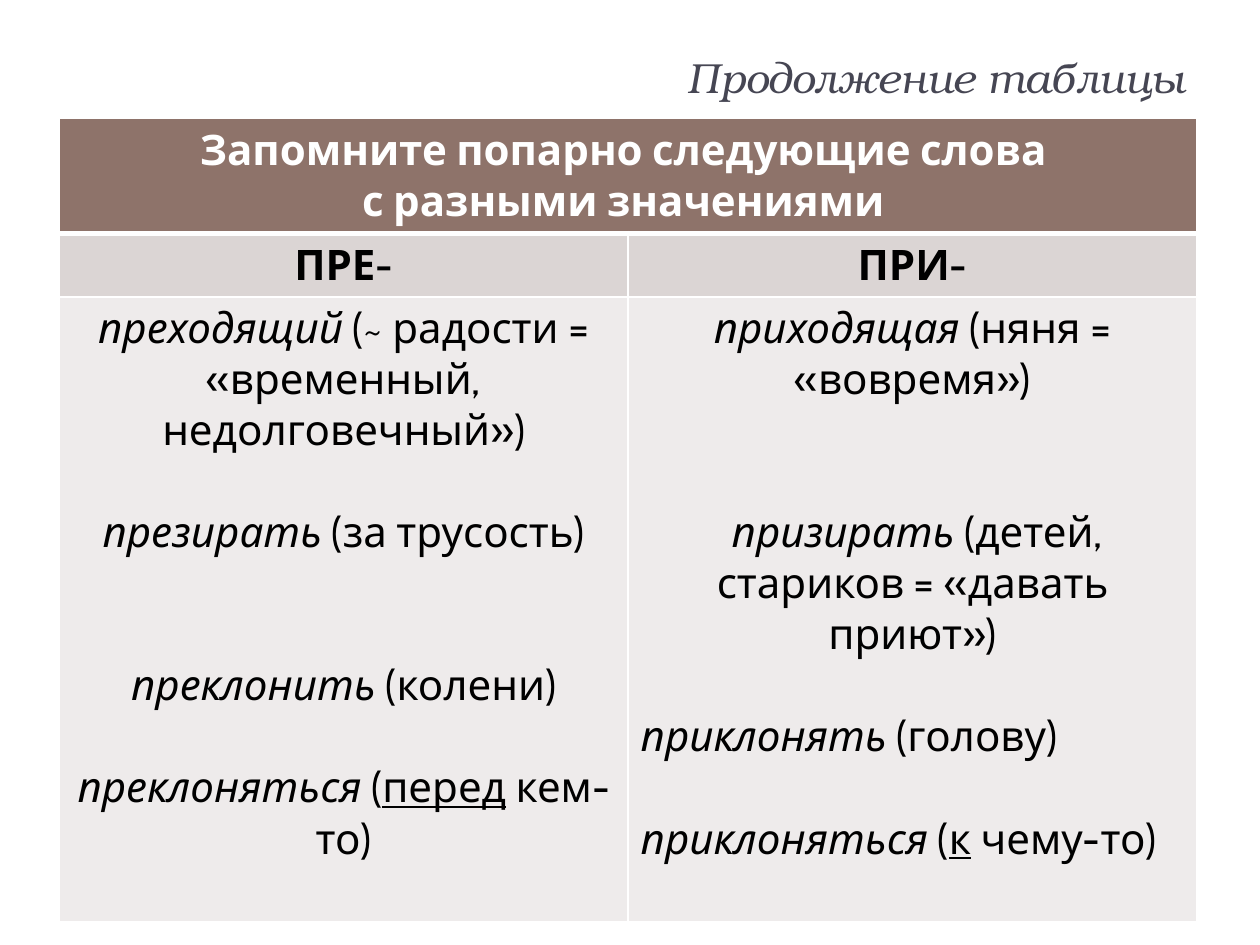
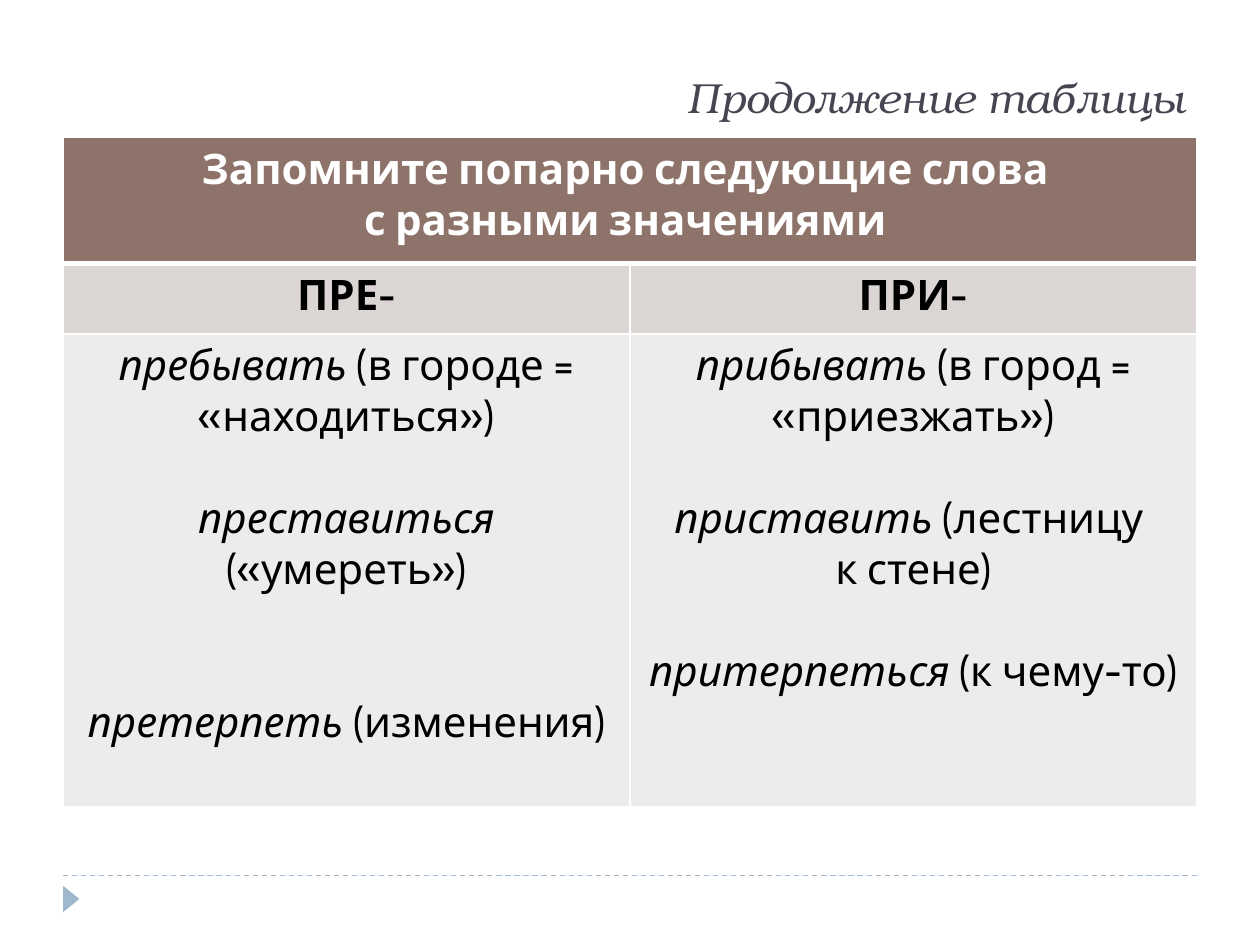
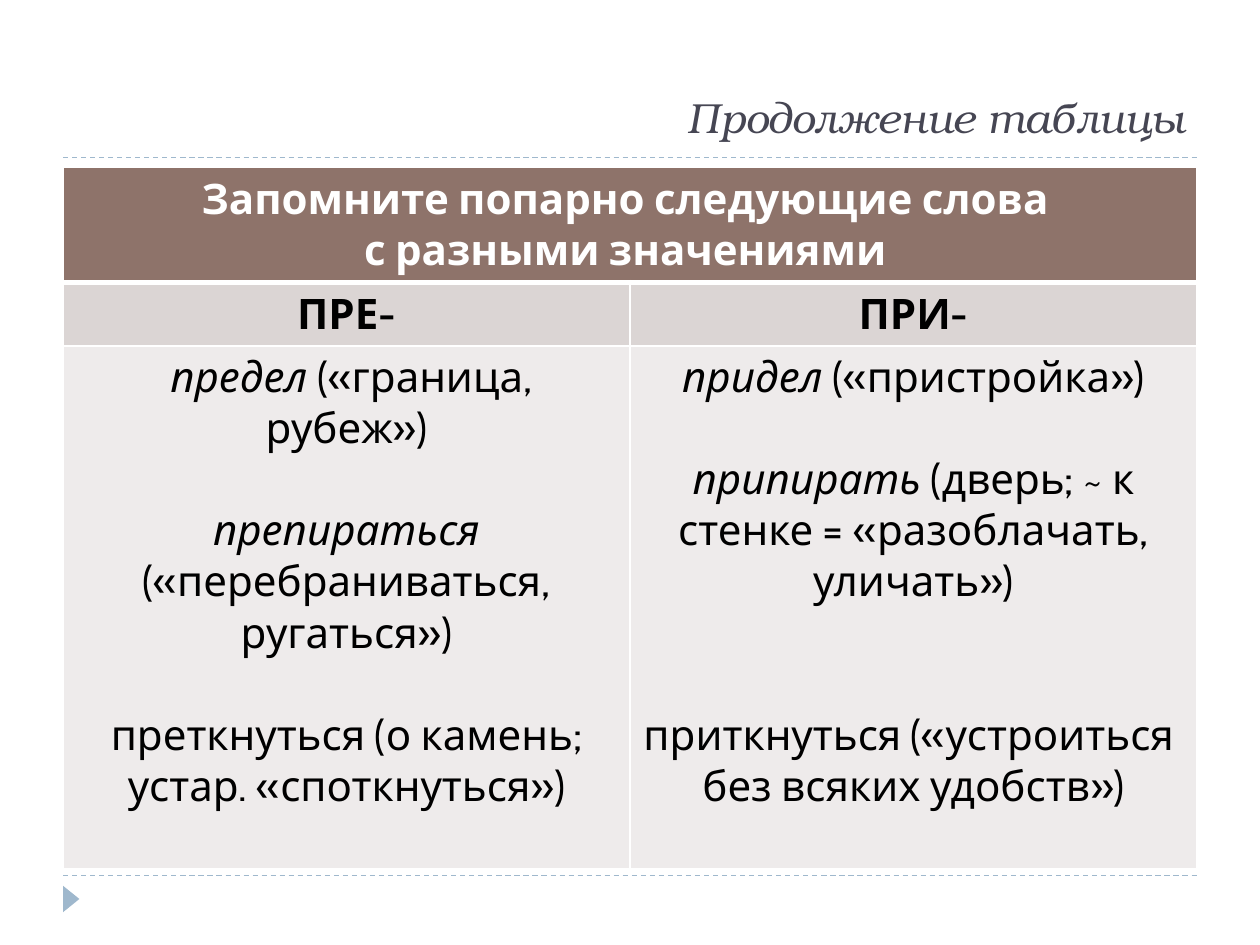
from dataclasses import dataclass

from lxml import etree
from pptx import Presentation
from pptx import util as u
from pptx.dml.color import RGBColor
from pptx.enum import dml, shapes, text
from pptx.oxml.ns import qn

WHITE = RGBColor(0xFF, 0xFF, 0xFF)
BLACK = RGBColor(0x00, 0x00, 0x00)
INK = RGBColor(0x46, 0x46, 0x53)
ACCENT = RGBColor(0x9F, 0xB8, 0xCD)
HEADER_FILL = RGBColor(0x8E, 0x73, 0x6A)
PREFIX_FILL = RGBColor(0xDB, 0xD5, 0xD4)
BODY_FILL = RGBColor(0xEE, 0xEB, 0xEB)

TITLE_FONT = "TeX Gyre Bonum"
BODY_FONT = "Cabin"
TEXT_SIZE = u.Pt(24)
LINE_PITCH = 29.15  # points per line of table text

TITLE = "Продолжение таблицы"
HEADING = ("Запомните попарно следующие слова ", "с разными значениями ")
PREFIXES = ("ПРЕ-", "ПРИ-")
LEFT, CENTER = text.PP_ALIGN.LEFT, text.PP_ALIGN.CENTER


@dataclass(frozen=True)
class Entry:
    """A word in italics and its explanation; gap counts free lines above."""
    word: str
    note: str
    gap: int = 1
    underlined: str = ""
    ending: str = ""
    align: text.PP_ALIGN = CENTER


@dataclass(frozen=True)
class WordTable:
    title_height: float
    left: float
    top: float
    width: float
    row_heights: tuple[float, float, float]
    columns: tuple[list[Entry], list[Entry]]


WORD_TABLES = [
    WordTable(0.69, 0.47, 0.94, 9.03, (0.91, 0.5, 4.96), (
        [
            Entry("преходящий", " (~ радости = «временный, недолговечный»)", 0),
            Entry("презирать", " (за трусость)"),
            Entry("преклонить", " (колени)", 2),
            Entry("преклоняться ", "(", 1, "перед", " кем-то)"),
        ],
        [
            Entry("приходящая ", "(няня = «вовремя»)", 0),
            Entry(" призирать ", "(детей, стариков = «давать приют»)", 2),
            Entry("приклонять", " (голову)", align=LEFT),
            Entry("приклоняться", " (", 1, "к", " чему-то)", LEFT),
        ],
    )),
    WordTable(0.85, 0.5, 1.09, 9, (1, 0.56, 3.75), (
        [
            Entry("пребывать", " (в городе = «находиться»)", 0),
            Entry("преставиться", " («умереть»)"),
            Entry("претерпеть", " (изменения)", 2),
        ],
        [
            Entry("прибывать", " (в город = «приезжать»)", 0),
            Entry("приставить", " (лестницу "),
            Entry("", "к стене)", 0),
            Entry("притерпеться ", "(к чему-то)"),
        ],
    )),
    WordTable(1.01, 0.5, 1.33, 9, (0.91, 0.5, 4.15), (
        [
            Entry(" предел", " («граница, рубеж»)", 0),
            Entry("препираться", " («перебраниваться, ругаться»)"),
            Entry("", "преткнуться (о камень; устар. «споткнуться»)"),
        ],
        [
            Entry("придел ", "(«пристройка»)", 0),
            Entry("припирать", " (дверь; ~ к стенке = «разоблачать, уличать»)"),
            Entry("", "приткнуться («устроиться ", 2),
            Entry("", "без всяких удобств»)", 0),
        ],
    )),
]


def decorate_layout(layout, slide) -> None:
    """Give the layout its dashed rules and corner triangle."""
    decorations = []
    for y in (6.95, 1.25):
        rule = slide.shapes.add_connector(
            shapes.MSO_CONNECTOR.STRAIGHT,
            u.Inches(0.5), u.Inches(y), u.Inches(9.5), u.Inches(y))
        rule.line.color.rgb = ACCENT
        rule.line.width = u.Pt(0.75)
        rule.line.dash_style = dml.MSO_LINE.DASH
        etree.SubElement(rule.element.spPr, qn("a:effectLst"))
        decorations.append(rule)
    triangle = slide.shapes.add_shape(
        shapes.MSO_SHAPE.ISOSCELES_TRIANGLE,
        u.Inches(0.46), u.Inches(7.07), u.Inches(0.21), u.Inches(0.13))
    triangle.rotation = 90
    triangle.shadow.inherit = False
    triangle.fill.solid()
    triangle.fill.fore_color.rgb = ACCENT
    triangle.line.fill.background()
    decorations.append(triangle)
    for shape_id, shape in enumerate(decorations, start=20):
        shape.element.xpath(".//p:cNvPr")[0].set("id", str(shape_id))
        layout.shapes.element.append(shape.element)


def format_title(slide, height: float) -> None:
    title = slide.shapes.title
    title.left, title.top = u.Inches(0.5), u.Inches(0.17)
    title.width, title.height = u.Inches(9), u.Inches(height)
    frame = title.text_frame
    frame.text = TITLE
    frame.vertical_anchor = text.MSO_ANCHOR.BOTTOM
    paragraph = frame.paragraphs[0]
    paragraph.alignment = text.PP_ALIGN.RIGHT
    font = paragraph.font
    font.name, font.size, font.italic = TITLE_FONT, TEXT_SIZE, True
    font.color.rgb = INK


def style_cell(cell, fill: RGBColor, top: float = 1, bottom: float = 1) -> None:
    """Draw the white borders, then the fill."""
    properties = cell._tc.get_or_add_tcPr()
    for side, points in (("L", 1), ("R", 1), ("T", top), ("B", bottom)):
        line = etree.SubElement(
            properties, qn(f"a:ln{side}"), w=str(u.Pt(points)))
        solid = etree.SubElement(line, qn("a:solidFill"))
        etree.SubElement(solid, qn("a:srgbClr"), val=str(WHITE))
    cell.fill.solid()
    cell.fill.fore_color.rgb = fill


def style_paragraph(paragraph, color: RGBColor, bold: bool,
                    align: text.PP_ALIGN = CENTER) -> None:
    paragraph.alignment = align
    font = paragraph.font
    font.name, font.size, font.bold = BODY_FONT, TEXT_SIZE, bold
    font.color.rgb = color


def write_entries(frame, entries: list[Entry]) -> None:
    for index, entry in enumerate(entries):
        paragraph = frame.add_paragraph() if index else frame.paragraphs[0]
        if entry.gap:
            paragraph.space_before = u.Pt(entry.gap * LINE_PITCH)
        style_paragraph(paragraph, BLACK, False, entry.align)
        for part in (entry.word, entry.note, entry.underlined, entry.ending):
            if part:
                run = paragraph.add_run()
                run.text = part
                if part == entry.word:
                    run.font.italic = True
                elif part == entry.underlined:
                    run.font.underline = True


def add_word_table(slide, words: WordTable) -> None:
    table = slide.shapes.add_table(
        3, 2, u.Inches(words.left), u.Inches(words.top),
        u.Inches(words.width), u.Inches(sum(words.row_heights))).table
    table.first_row = table.horz_banding = False
    for row, height in zip(table.rows, words.row_heights):
        row.height = u.Inches(height)

    # Heading across both columns
    heading = table.cell(0, 0)
    heading.merge(table.cell(0, 1))
    heading.text_frame.text = "\n".join(HEADING)
    for paragraph in heading.text_frame.paragraphs:
        style_paragraph(paragraph, WHITE, True)

    # Prefix and word list of each column
    for column, entries in enumerate(words.columns):
        style_cell(table.cell(0, column), HEADER_FILL, bottom=3)
        prefix = table.cell(1, column)
        prefix.text_frame.text = PREFIXES[column]
        style_paragraph(prefix.text_frame.paragraphs[0], BLACK, True)
        style_cell(prefix, PREFIX_FILL, top=3)
        body = table.cell(2, column)
        write_entries(body.text_frame, entries)
        style_cell(body, BODY_FILL)


def main() -> None:
    presentation = Presentation()
    presentation.slide_width = u.Inches(10)
    presentation.slide_height = u.Inches(7.5)
    layout = presentation.slide_layouts[5]
    for index, words in enumerate(WORD_TABLES):
        slide = presentation.slides.add_slide(layout)
        if index == 0:
            decorate_layout(layout, slide)
        format_title(slide, words.title_height)
        add_word_table(slide, words)
    presentation.save("out.pptx")


if __name__ == "__main__":
    main()
